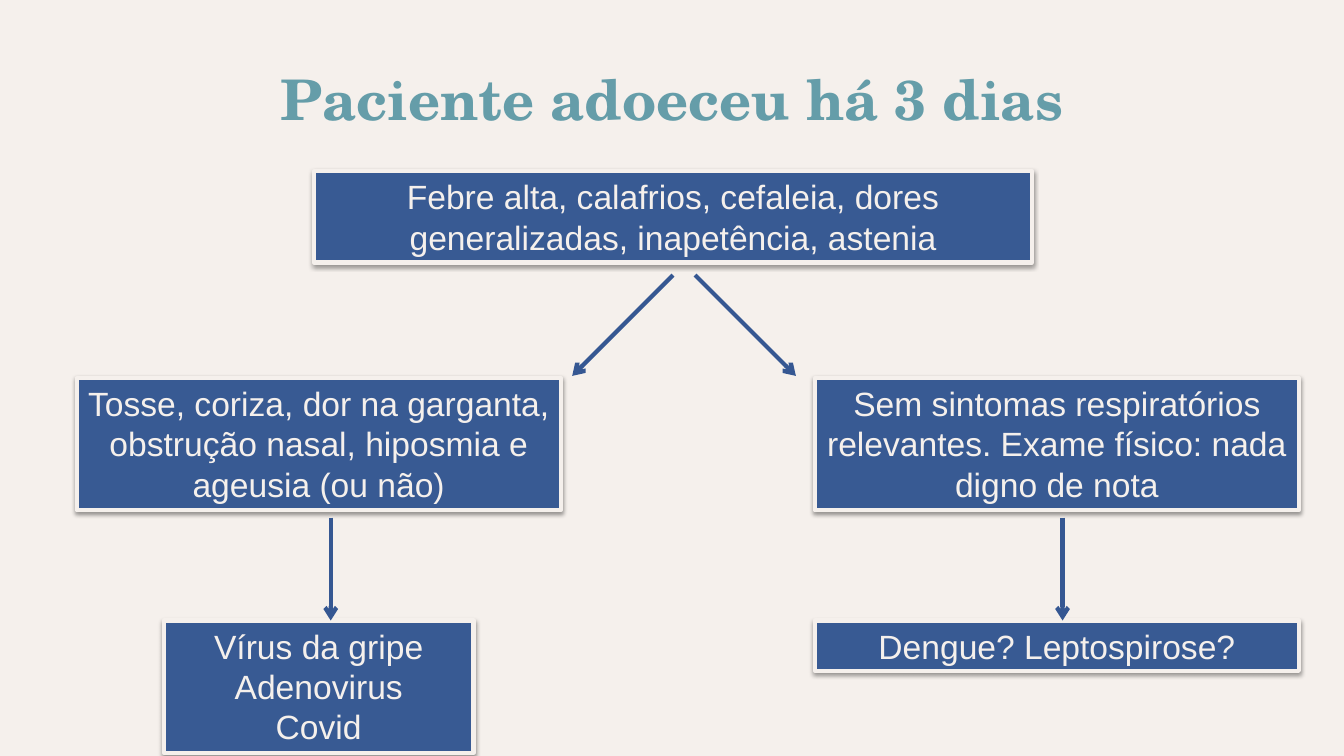
from lxml import etree
from pptx import Presentation
from pptx.dml.color import RGBColor
from pptx.enum.shapes import MSO_CONNECTOR, MSO_SHAPE
from pptx.enum.text import MSO_ANCHOR, MSO_AUTO_SIZE, PP_ALIGN
from pptx.oxml.ns import qn
from pptx.util import Pt

PX = 9525  # EMU per px, 96 px to the inch
STRAIGHT = MSO_CONNECTOR.STRAIGHT
RECTANGLE = MSO_SHAPE.RECTANGLE
TOP, MIDDLE = MSO_ANCHOR.TOP, MSO_ANCHOR.MIDDLE
CENTER = PP_ALIGN.CENTER
NO_FIT, GROW = MSO_AUTO_SIZE.NONE, MSO_AUTO_SIZE.SHAPE_TO_FIT_TEXT


class Theme:
    paper = RGBColor.from_string("F5F0EC")
    box = RGBColor.from_string("385A93")
    arrow = RGBColor.from_string("355792")
    title = RGBColor.from_string("659DA9")
    title_font, title_size = "TeX Gyre Schola", Pt(40)
    body_font, body_size = "Arial", Pt(24)
    stroke = Pt(3)


def style_text(frame, font_name, size, color, bold):
    for para in frame.paragraphs:
        para.alignment = CENTER
        for span in para.runs:
            span.font.name = font_name
            span.font.size = size
            span.font.bold = bold
            span.font.color.rgb = color


def add_shadow(shape):
    shape.shadow.inherit = False
    effects = shape.element.spPr.find(qn("a:effectLst"))
    shadow = etree.SubElement(effects, qn("a:outerShdw"), blurRad="40000",
                              dist="20000", dir="5400000", rotWithShape="0")
    color = etree.SubElement(shadow, qn("a:srgbClr"), val="000000")
    etree.SubElement(color, qn("a:alpha"), val="38000")


# Deck and page
deck = Presentation()
deck.slide_width, deck.slide_height = 1280 * PX, 720 * PX
page = deck.slides.add_slide(deck.slide_layouts[5])
page.background.fill.solid()
page.background.fill.fore_color.rgb = Theme.paper

# Title
title = page.shapes.title
title.left, title.top, title.width, title.height = 101 * PX, 30 * PX, 1078 * PX, 126 * PX
frame = title.text_frame
frame.text = "Paciente adoeceu há 3 dias"
frame.word_wrap = True
frame.auto_size = NO_FIT
frame.vertical_anchor = MIDDLE
frame.margin_left = frame.margin_right = frame.margin_top = frame.margin_bottom = 10 * PX
style_text(frame, Theme.title_font, Theme.title_size, Theme.title, True)

# Boxes of the decision tree: left, top, width, height, text
SYMPTOM_TOP, CAUSE_TOP = 360, 591
boxes = [
    (299, 163, 684, 87,
     "Febre alta, calafrios, cefaleia, dores generalizadas, inapetência, astenia"),
    (73, SYMPTOM_TOP, 461, 126,
     "Tosse, coriza, dor na garganta, obstrução nasal, hiposmia e ageusia (ou não)"),
    (776, SYMPTOM_TOP, 461, 126,
     "Sem sintomas respiratórios relevantes. Exame físico: nada digno de nota"),
    (156, CAUSE_TOP, 295, 126, "Vírus da gripe\nAdenovirus\nCovid"),
    (776, CAUSE_TOP, 461, 48, "Dengue? Leptospirose?"),
]
for left, top, width, height, text in boxes:
    box = page.shapes.add_shape(RECTANGLE, left * PX, top * PX, width * PX, height * PX)
    box.fill.solid()
    box.fill.fore_color.rgb = Theme.box
    box.line.color.rgb = Theme.paper
    box.line.width = Theme.stroke
    add_shadow(box)
    frame = box.text_frame
    frame.text = text
    frame.word_wrap = True
    frame.auto_size = GROW
    frame.vertical_anchor = TOP
    style_text(frame, Theme.body_font, Theme.body_size, Theme.paper, False)

# Arrows: start x, start y, end x, end y
arrows = [
    (641, 262, 545, 358),
    (662, 262, 758, 358),
    (315, 493, 315, CAUSE_TOP),
    (1012, 493, 1012, CAUSE_TOP),
]
for ends in arrows:
    arrow = page.shapes.add_connector(STRAIGHT, *[end * PX for end in ends])
    arrow.line.color.rgb = Theme.arrow
    arrow.line.width = Theme.stroke
    properties = arrow.element.spPr
    etree.SubElement(properties.find(qn("a:ln")), qn("a:tailEnd"), type="arrow")
    etree.SubElement(properties, qn("a:effectLst"))

deck.save("out.pptx")
